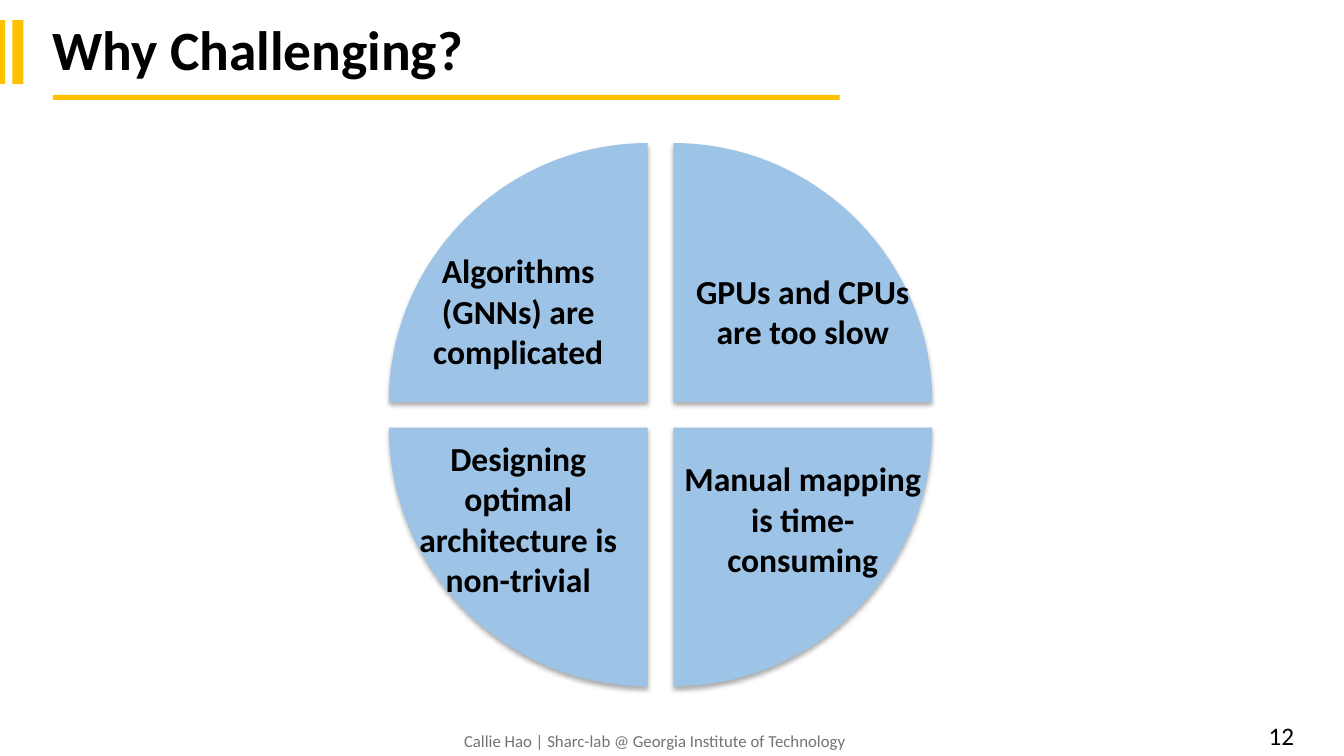
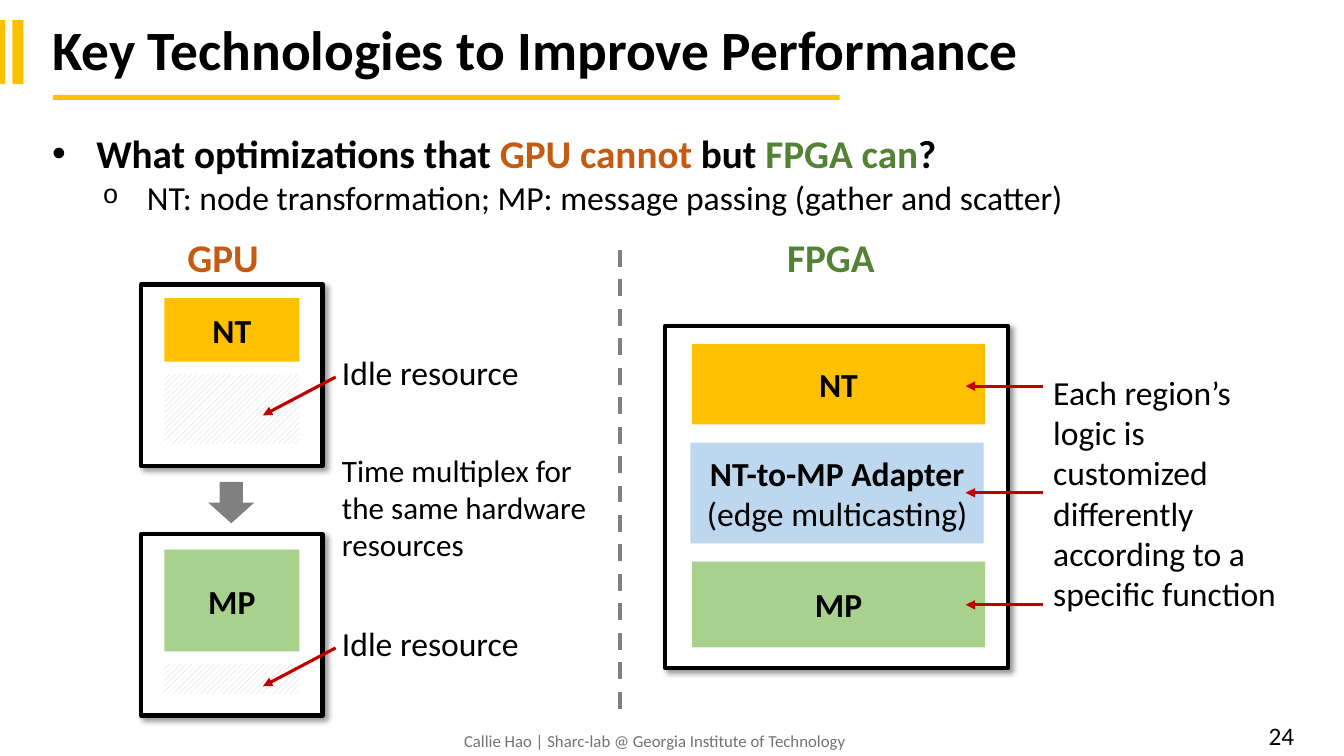
from dataclasses import dataclass

from lxml.etree import SubElement
from pptx import Presentation
from pptx.dml.color import RGBColor
from pptx.enum.dml import MSO_LINE, MSO_PATTERN
from pptx.enum.shapes import MSO_CONNECTOR, MSO_SHAPE as Preset
from pptx.enum.text import MSO_ANCHOR as Anchor, PP_ALIGN as Align
from pptx.oxml.ns import qn
from pptx.util import Pt


@dataclass(frozen=True)
class Theme:
    font: str = "Calibri"
    black: str = "000000"
    white: str = "FFFFFF"
    gold: str = "FFC000"
    green: str = "A9D18E"
    pale_blue: str = "BDD7EE"
    wedge_blue: str = "9DC3E6"
    gpu: str = "C55A11"
    fpga: str = "548235"
    arrow: str = "C00000"
    grey: str = "808080"
    hatch: str = "D0CECE"
    footer: str = "767171"
    title_size: float = 39.6
    heading_size: float = 28
    body_size: float = 24
    note_size: float = 22.2
    page_size: float = 18
    footer_size: float = 12


THEME = Theme()
INSETS = (7.2, 3.6, 7.2, 3.6)
ARC_PULL = 0.55  # Bézier handle length of a quarter circle


# Basic parts
def rgb(value):
    return RGBColor.from_string(value)


def write(shape, *lines, size=THEME.body_size, color=THEME.black, bold=False,
          align=Align.LEFT, anchor=Anchor.TOP, insets=INSETS, spacing=None):
    """Fill a shape; a line is a string or a list of (text, format changes)."""
    frame = shape.text_frame
    frame.word_wrap = True
    frame.vertical_anchor = anchor
    (frame.margin_left, frame.margin_top,
     frame.margin_right, frame.margin_bottom) = map(Pt, insets)
    for index, line in enumerate(lines):
        paragraph = frame.add_paragraph() if index else frame.paragraphs[0]
        paragraph.alignment = align
        if spacing:
            paragraph.line_spacing = spacing
        for text, changes in [(line, {})] if isinstance(line, str) else line:
            style = {"size": size, "color": color, "bold": bold, **changes}
            run = paragraph.add_run()
            run.text = text
            run.font.name = THEME.font
            run.font.size = Pt(style["size"])
            run.font.bold = style["bold"]
            run.font.color.rgb = rgb(style["color"])
    return shape


def add_text(slide, box, *lines, **style):
    return write(slide.shapes.add_textbox(*map(Pt, box)), *lines, **style)


def paint(shape, fill, line=None):
    shape.shadow.inherit = False
    shape.fill.solid()
    shape.fill.fore_color.rgb = rgb(fill)
    if line:
        shape.line.color.rgb = rgb(line)
        shape.line.width = Pt(3)
    else:
        shape.line.fill.background()
    return shape


def add_box(slide, box, fill, line=None, preset=Preset.RECTANGLE):
    return paint(slide.shapes.add_shape(preset, *map(Pt, box)), fill, line)


def add_shadow(shape, opacity, blur, distance, angle):
    effects = shape.element.spPr.find(qn("a:effectLst"))
    shadow = SubElement(effects, qn("a:outerShdw"), blurRad=str(Pt(blur)),
                        dist=str(Pt(distance)), dir=str(angle * 60000),
                        algn="tl", rotWithShape="0")
    color = SubElement(shadow, qn("a:srgbClr"), val=THEME.black)
    SubElement(color, qn("a:alpha"), val=str(opacity * 1000))


def add_line(slide, start, end, color, width):
    line = slide.shapes.add_connector(MSO_CONNECTOR.STRAIGHT,
                                      *map(Pt, (*start, *end)))
    line.line.color.rgb = rgb(color)
    line.line.width = Pt(width)
    SubElement(line.element.spPr, qn("a:effectLst"))
    return line


def add_arrow(slide, start, end):
    arrow = add_line(slide, start, end, THEME.arrow, 2.25)
    SubElement(arrow.element.spPr.find(qn("a:ln")), qn("a:tailEnd"),
               type="triangle")


def add_bullet(paragraph, character, font, left, hanging, percent=100):
    properties = paragraph._p.get_or_add_pPr()
    properties.set("marL", str(Pt(left)))
    properties.set("indent", str(Pt(-hanging)))
    SubElement(properties, qn("a:buSzPct"), val=str(percent * 1000))
    SubElement(properties, qn("a:buFont"), typeface=font)
    SubElement(properties, qn("a:buChar"), char=character)


# Frame shared by the slides
def add_slide(presentation, title, number):
    slide = presentation.slides.add_slide(presentation.slide_layouts[6])
    for bar in ((0, 14.4, 3.6, 45.8), (8.8, 14.4, 8, 45.8), (37.8, 67.8, 562, 3.6)):
        add_box(slide, bar, THEME.gold)
    add_text(slide, (324.4, 524, 294, 11),
             "Callie Hao | Sharc-lab @ Georgia Institute of Technology",
             size=THEME.footer_size, color=THEME.footer, anchor=Anchor.MIDDLE)
    add_text(slide, (875.5, 511, 56, 24), str(number),
             size=THEME.page_size, align=Align.RIGHT)
    add_text(slide, (30.4, 13, 891, 49), title, size=THEME.title_size,
             bold=True, anchor=Anchor.MIDDLE, spacing=0.9)
    return slide


# Circle of four wedges
def bend_first_side(shape):
    """Turn the first side of a freeform into a quarter arc."""
    side = next(shape.element.iter(qn("a:lnTo")))
    start = next(shape.element.iter(qn("a:moveTo")))[0]
    x1, y1, x2, y2 = (int(point.get(axis)) for point in (start, side[0])
                      for axis in "xy")
    handles = ((x1, y1 + ARC_PULL * (y2 - y1)), (x2 + ARC_PULL * (x1 - x2), y2))
    side.tag = qn("a:cubicBezTo")
    side.remove(side[0])
    for x, y in (*handles, (x2, y2)):
        SubElement(side, qn("a:pt"), x=str(round(x)), y=str(round(y)))


def add_wedge(slide, corner, radius, side_x, side_y, text):
    x, y = corner
    builder = slide.shapes.build_freeform(Pt(x + side_x * radius), Pt(y))
    builder.add_line_segments([(Pt(x), Pt(y + side_y * radius)), (Pt(x), Pt(y))],
                              close=True)
    wedge = paint(builder.convert_to_shape(), THEME.wedge_blue)
    bend_first_side(wedge)
    add_shadow(wedge, 32, 3.5, 2.2, 90)
    outer, inner = 63.4, 8.6
    top, bottom = (outer, inner) if side_y < 0 else (inner, outer)
    write(wedge, text, bold=True, align=Align.CENTER, anchor=Anchor.MIDDLE,
          insets=(7.2, top, 7.2, bottom))


def add_wheel(slide, box, gap, texts):
    left, top, size = box
    radius = (size - gap) / 2
    middle_x, middle_y = left + size / 2, top + size / 2
    sides = ((-1, -1), (1, -1), (-1, 1), (1, 1))
    for (side_x, side_y), text in zip(sides, texts):
        corner = (middle_x + side_x * gap / 2, middle_y + side_y * gap / 2)
        add_wedge(slide, corner, radius, side_x, side_y, text)


# Hardware diagrams
def add_panel(slide, left, top, size):
    add_shadow(add_box(slide, (left, top, size, size), THEME.white, THEME.black),
               40, 4, 3, 45)


def add_block(slide, box, fill, *lines):
    write(add_box(slide, box, fill), *lines, bold=True,
          align=Align.CENTER, anchor=Anchor.MIDDLE)


def add_heading(slide, left, top, text, color):
    add_text(slide, (left, top, 104, 41), text, size=THEME.heading_size,
             color=color, bold=True)


def add_gpu(slide, left, top):
    size, pitch, inset, width, gap = 129.6, 178.4, 16.6, 96.4, 9
    add_heading(slide, left + 26, top, "GPU", THEME.gpu)
    # Name, fill, block offset and height, idle height, label offset
    phases = (("NT", THEME.gold, 9.8, 45.4, 49.7, 44.5),
              ("MP", THEME.green, 11, 72.7, 21.6, 59.6))
    for index, (name, fill, inner, height, idle, offset) in enumerate(phases):
        panel_top = top + 40 + index * pitch
        add_panel(slide, left, panel_top, size)
        block_top = panel_top + inner
        add_block(slide, (left + inset, block_top, width, height), fill, name)
        hatch = add_box(slide, (left + inset, block_top + height + gap, width, idle),
                        THEME.white)
        hatch.fill.patterned()
        hatch.fill.pattern = MSO_PATTERN.WIDE_UPWARD_DIAGONAL
        hatch.fill.fore_color.rgb = rgb(THEME.hatch)
        hatch.fill.back_color.rgb = rgb(THEME.white)
        label_top = panel_top + offset
        add_text(slide, (left + 136.4, label_top, 149, 52.6), "Idle resource")
        add_arrow(slide, (left + 139, label_top + 21.6), (left + 87, label_top + 49))
    add_box(slide, (left + (size - 33) / 2 - 0.4, top + 181, 33, 29.5), THEME.grey,
            preset=Preset.DOWN_ARROW)
    add_text(slide, (left + 136.4, top + 155.4, 201.6, 104.4),
             "Time multiplex for the same hardware resources",
             size=THEME.note_size)


def add_fpga(slide, left, top):
    size, width, gap = 244.8, 209.5, 13
    panel_top = top + 69.4
    add_heading(slide, left + 80, top, "FPGA", THEME.fpga)
    add_panel(slide, left, panel_top, size)
    adapter = ("NT-to-MP Adapter", [("(edge multicasting)", {"bold": False})])
    # Fill, inset, height, arrow offset, lines
    blocks = ((THEME.gold, 19, 57.6, 43.2, ("NT",)),
              (THEME.pale_blue, 18, 72, 119.4, adapter),
              (THEME.green, 19, 61.2, 199.4, ("MP",)))
    block_top = panel_top + gap
    for fill, inset, height, offset, lines in blocks:
        add_block(slide, (left + inset, block_top, width, height), fill, *lines)
        arrow_y = panel_top + offset
        add_arrow(slide, (left + 270, arrow_y), (left + 214.6, arrow_y))
        block_top += height + gap
    add_text(slide, (left + 270, panel_top + 29.2, 181.4, 189.4),
             "Each region’s logic is customized differently "
             "according to a specific function")


def add_question(slide, box):
    body = add_text(
        slide, box,
        [("What optimizations that ", {}), ("GPU cannot", {"color": THEME.gpu}),
         (" but ", {}), ("FPGA can", {"color": THEME.fpga}), ("?", {})],
        [("NT: node transformation; MP: message passing (gather and scatter)",
          {"size": THEME.body_size, "bold": False})],
        size=THEME.heading_size, bold=True)
    question, legend = body.text_frame.paragraphs
    legend.level = 1
    add_bullet(question, "•", "Arial", 31.5, 31.5)
    add_bullet(legend, "o", "Courier New", 67.7, 31.7, 80)


# Slides
def build_challenges(presentation):
    slide = add_slide(presentation, "Why Challenging?", 12)
    add_wheel(slide, (277.8, 102.2, 388), 18.4,
              ("Algorithms (GNNs) are complicated",
               "GPUs and CPUs are too slow",
               "Designing optimal architecture is non-trivial",
               "Manual mapping is time-consuming"))


def build_technologies(presentation):
    slide = add_slide(presentation, "Key Technologies to Improve Performance", 24)
    add_question(slide, (30.2, 89, 896, 84))
    add_gpu(slide, 100.8, 163.2)
    add_fpga(slide, 475.2, 163.2)
    divider = add_line(slide, (442.8, 178.6), (442.8, 509.8), THEME.grey, 3)
    divider.line.dash_style = MSO_LINE.DASH


def main():
    presentation = Presentation()
    presentation.slide_width, presentation.slide_height = Pt(960), Pt(540)
    build_challenges(presentation)
    build_technologies(presentation)
    presentation.save("out.pptx")


if __name__ == "__main__":
    main()
